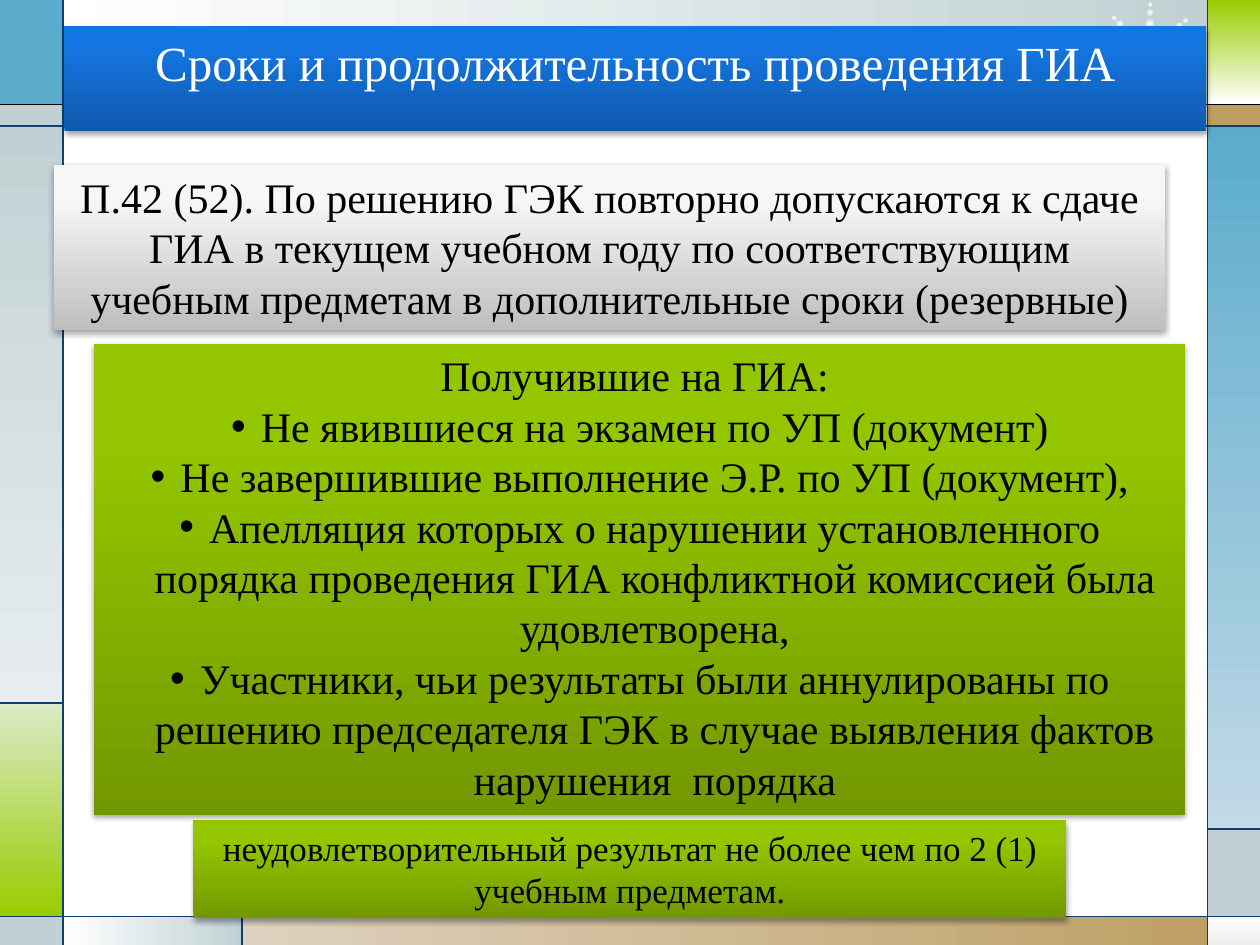
import math
from lxml import etree
from pptx import Presentation
from pptx import util as u
from pptx.dml import color
from pptx.enum import shapes, text
from pptx.oxml import ns

FONT = "Times New Roman"
BLUE = [(0, "0F5AAD"), (80, "1475E0"), (100, "1075E5")]
GREEN = [(0, "729800"), (80, "94C600"), (100, "95C700")]
GREY = [(0, "BEBEBE"), (80, "F7F7F7"), (100, "F8F8F8")]
RECTANGLE = shapes.MSO_SHAPE.RECTANGLE
OVAL = shapes.MSO_SHAPE.OVAL


def rgb(value):
    return color.RGBColor.from_string(value)


def add_node(parent, tag, **attributes):
    return etree.SubElement(parent, ns.qn(tag), {key: str(value) for key, value in attributes.items()})


def fill_gradient(shape, stops, angle):
    shape.fill.gradient()
    gradient = shape.element.spPr.find(ns.qn("a:gradFill"))
    for child in list(gradient):
        gradient.remove(child)
    stop_list = add_node(gradient, "a:gsLst")
    for position, value in stops:
        stop = add_node(stop_list, "a:gs", pos=position * 1000)
        add_node(stop, "a:srgbClr", val=value)
    if angle is None:
        radial = add_node(gradient, "a:path", path="circle")
        add_node(radial, "a:fillToRect", l=50000, t=50000, r=50000, b=50000)
    else:
        add_node(gradient, "a:lin", ang=angle * 60000, scaled=0)


def place(shape, box):
    shape.left, shape.top, shape.width, shape.height = (u.Cm(value) for value in box)


def add_panel(slide, kind, box, colours, angle=None):
    panel = slide.shapes.add_shape(kind, *(u.Cm(value) for value in box))
    panel.shadow.inherit = False
    panel.line.fill.background()
    if len(colours) == 1:
        panel.fill.solid()
        panel.fill.fore_color.rgb = rgb(colours[0])
    else:
        fill_gradient(panel, list(zip((0, 100), colours)), angle)
    return panel


def add_line(slide, start, end, value="113F71"):
    line = slide.shapes.add_connector(
        shapes.MSO_CONNECTOR.STRAIGHT, *(u.Cm(number) for number in (*start, *end)))
    line.line.color.rgb = rgb(value)
    line.line.width = u.Pt(0.75)
    add_node(line.element.spPr, "a:effectLst")


def add_star(slide, box):
    left, top, width, height = box
    center_x, center_y = left + width / 2, top + height / 2
    colours = ("FFFFFF", "C1D1D3")
    core = 0.76
    add_panel(slide, OVAL, (center_x - core / 2, center_y - core / 2, core, core), colours)
    dots = [(0.31, 0.2, 0.18), (0.42, 0.13, 0.13), (0.5, 0.1, 0.08)]
    for arm in range(8):
        angle = arm * 45 + 2
        for reach, dot_width, dot_height in dots:
            x = center_x + width * reach * math.cos(math.radians(angle))
            y = center_y + height * reach * math.sin(math.radians(angle))
            dot = add_panel(
                slide, OVAL,
                (x - dot_width / 2, y - dot_height / 2, dot_width, dot_height), colours)
            dot.rotation = angle


def add_frame(slide, box):
    left, top, width, height = box
    right, bottom = left + width, top + height
    inner_left, inner_right = left + 1.27, right - 1.06
    band_top, band_bottom = top + 2.11, top + 2.54
    left_split, right_split = top + 14.17, top + 16.71
    foot_top, foot_split = bottom - 0.58, left + 4.88

    panels = [
        (inner_left, top, inner_right, band_top, ("FFFFFF", "C1D1D3"), 0),
        (left, top, inner_left, band_top, ("5AABCC",), None),
        (left, band_top, inner_left, band_bottom, ("C1D1D3",), None),
        (left, band_bottom, inner_left, left_split, ("C1D1D3", "E7EDEE"), 90),
        (left, left_split, inner_left, foot_top, ("DBEBC9", "99CC00"), 90),
        (left, foot_top, inner_left, bottom, ("C1D1D3",), None),
        (inner_left, foot_top, foot_split, bottom, ("FFFFFF", "C1D1D3"), 0),
        (foot_split, foot_top, right, bottom, ("DED1BF", "BD9E61"), 0),
        (inner_right, foot_top, right, bottom, ("FFFFFF", "EDEDED"), 90),
        (inner_right, right_split, right, foot_top, ("C1D1D3",), None),
        (inner_right, band_bottom, right, right_split, ("5AABCC", "C2D9E7"), 90),
        (inner_right, band_top, right, band_bottom, ("BD9E61",), None),
        (inner_right, top, right, band_top, ("99CC00", "FFFFFF"), 90),
        (inner_left, band_top, inner_right, band_bottom, ("2D7ACF", "D7DEF0"), 0),
    ]
    for x1, y1, x2, y2, colours, angle in panels:
        add_panel(slide, RECTANGLE, (x1, y1, x2 - x1, y2 - y1), colours, angle)

    add_star(slide, (inner_right - 2.2, top + 0.09, 2.54 * 0.8, 2.54 * 0.8))

    add_line(slide, (left, band_top), (right, band_top), "000000")
    for y in (band_bottom, foot_top):
        add_line(slide, (left, y), (right, y))
    for x in (inner_left, inner_right):
        add_line(slide, (x, top), (x, bottom))
    add_line(slide, (inner_left, left_split), (left, left_split))
    add_line(slide, (foot_split, foot_top), (foot_split, bottom))
    add_line(slide, (inner_right, right_split), (right, right_split))


def add_bullet(paragraph):
    properties = paragraph._p.get_or_add_pPr()
    indent = u.Cm(0.6)
    properties.set("marL", str(indent))
    properties.set("indent", str(-indent))
    add_node(properties, "a:buFont", typeface="Arial")
    add_node(properties, "a:buChar", char="•")


def format_card(shape, stops, lines, size, font_colour="000000"):
    fill_gradient(shape, stops, 270)
    shape.line.fill.background()
    shape.shadow.inherit = False
    effects = shape.element.spPr.find(ns.qn("a:effectLst"))
    shadow = add_node(effects, "a:outerShdw", blurRad=u.Pt(3.1), dist=u.Pt(1.8),
                      dir=90 * 60000, rotWithShape=0)
    shade = add_node(shadow, "a:srgbClr", val="000000")
    add_node(shade, "a:alpha", val=35000)

    frame = shape.text_frame
    frame.word_wrap = True
    frame.auto_size = text.MSO_AUTO_SIZE.SHAPE_TO_FIT_TEXT
    frame.vertical_anchor = text.MSO_ANCHOR.TOP
    for index, line in enumerate(lines):
        paragraph = frame.add_paragraph() if index else frame.paragraphs[0]
        paragraph.text = line
        paragraph.alignment = text.PP_ALIGN.CENTER
        if index:
            add_bullet(paragraph)
        paragraph.font.name = FONT
        paragraph.font.size = u.Pt(size)
        paragraph.font.color.rgb = rgb(font_colour)


def add_title(slide, box):
    title = slide.shapes.title
    place(title, box)
    format_card(title, BLUE, ["Сроки и продолжительность проведения ГИА"], 28, "FFFFFF")
    title.element.getparent().append(title.element)


def add_card(slide, box, stops, lines, size):
    card = slide.shapes.add_shape(RECTANGLE, *(u.Cm(value) for value in box))
    format_card(card, stops, lines, size)


def main():
    presentation = Presentation()
    presentation.slide_width, presentation.slide_height = u.Cm(25.4), u.Cm(19.05)
    slide = presentation.slides.add_slide(presentation.slide_layouts[5])

    add_frame(slide, (0, 0, 25.4, 19.05))
    add_title(slide, (1.3, 0.53, 23.01, 1.45))
    add_card(slide, (1.9, 6.93, 22, 9.5), GREEN, [
        "Получившие на ГИА: ",
        "Не явившиеся на экзамен по УП (документ)",
        "Не завершившие выполнение Э.Р. по УП (документ),",
        "Апелляция которых о нарушении установленного порядка проведения ГИА "
        "конфликтной комиссией была удовлетворена,",
        "Участники, чьи результаты были аннулированы по решению председателя ГЭК "
        "в случае выявления фактов нарушения  порядка",
    ], 24)
    add_card(slide, (3.9, 16.54, 17.6, 1.96), GREEN, [
        "неудовлетворительный результат не более чем по 2 (1) учебным предметам.",
    ], 20)
    add_card(slide, (1.09, 3.33, 22.4, 3.33), GREY, [
        "П.42 (52). По решению ГЭК повторно допускаются к сдаче ГИА в текущем "
        "учебном году по соответствующим учебным предметам в дополнительные "
        "сроки (резервные)",
    ], 24)
    presentation.save("out.pptx")


if __name__ == "__main__":
    main()
